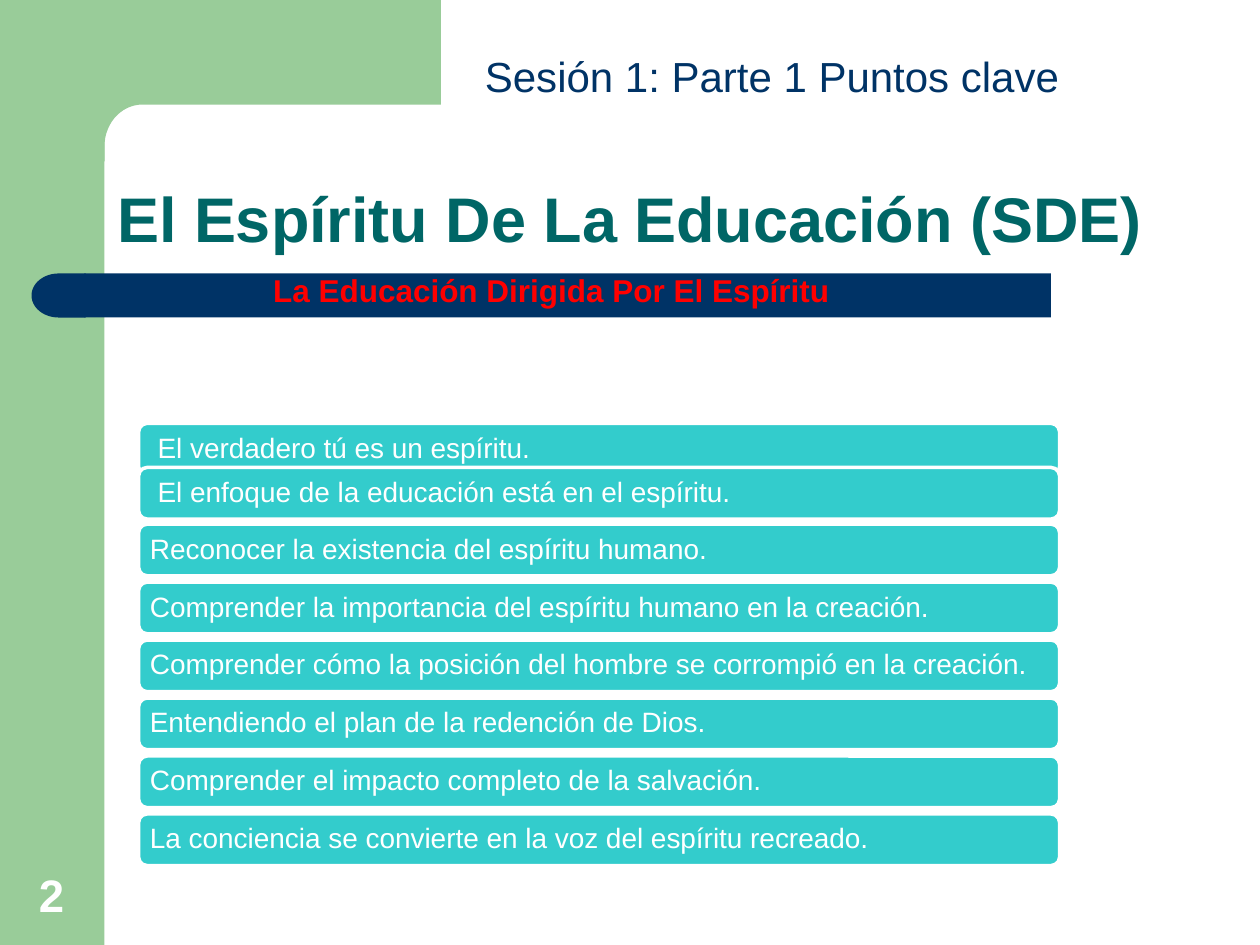
import math
import pptx
import pptx.util
import pptx.dml.color
import pptx.enum.shapes
import pptx.enum.text

Inches = pptx.util.Inches
Shape = pptx.enum.shapes.MSO_SHAPE
Anchor = pptx.enum.text.MSO_ANCHOR
Align = pptx.enum.text.PP_ALIGN

GREEN, NAVY, TEAL = "99CC99", "003366", "006666"
AQUA, RED, WHITE = "33CCCC", "FF0000", "FFFFFF"

POINTS = [
    " El verdadero tú es un espíritu.",
    " El enfoque de la educación está en el espíritu.",
    "Reconocer la existencia del espíritu humano.",
    "Comprender la importancia del espíritu humano en la creación.",
    "Comprender cómo la posición del hombre se corrompió en la creación.",
    "Entendiendo el plan de la redención de Dios.",
    "Comprender el impacto completo de la salvación.",
    "La conciencia se convierte en la voz del espíritu recreado.",
]


def color(code):
    return pptx.dml.color.RGBColor.from_string(code)


def write(frame, text, size=16, ink=WHITE, bold=False, align=Align.LEFT,
          anchor=Anchor.TOP, space=1.0, wrap=True, inset=None):
    frame.word_wrap = wrap
    frame.auto_size = pptx.enum.text.MSO_AUTO_SIZE.NONE
    frame.vertical_anchor = anchor
    if inset is not None:
        frame.margin_left = frame.margin_right = Inches(inset)
        frame.margin_top = frame.margin_bottom = Inches(inset)
    para = frame.paragraphs[0]
    para.alignment = align
    para.line_spacing = space
    run = para.add_run()
    run.text = text
    run.font.name = "Arial"
    run.font.size = pptx.util.Pt(size)
    run.font.bold = bold
    run.font.color.rgb = color(ink)


class Deck:
    """Holds the style and the current slide."""

    def __init__(self):
        self.file = pptx.Presentation()
        self.file.slide_width = Inches(10)
        self.file.slide_height = Inches(7.5)
        self.slide = self.file.slides.add_slide(self.file.slide_layouts[5])

    def paint(self, shape, fill, line=None):
        shape.shadow.inherit = False
        shape.fill.solid()
        shape.fill.fore_color.rgb = color(fill)
        if line:
            shape.line.color.rgb = color(line)
            shape.line.width = pptx.util.Pt(2)
        else:
            shape.line.fill.background()
        return shape

    def block(self, kind, box, fill, line=None):
        shape = self.slide.shapes.add_shape(kind, *map(Inches, box))
        return self.paint(shape, fill, line)

    def outline(self, dots, fill):
        dots = [(Inches(x), Inches(y)) for x, y in dots]
        pen = self.slide.shapes.build_freeform(*dots[0])
        pen.add_line_segments(dots[1:], close=True)
        return self.paint(pen.convert_to_shape(), fill)

    def title(self, box, text, **style):
        shape = self.slide.shapes.title
        shape.left, shape.top, shape.width, shape.height = map(Inches, box)
        write(shape.text_frame, text, **style)

    def label(self, box, text, **style):
        shape = self.slide.shapes.add_textbox(*map(Inches, box))
        write(shape.text_frame, text, **style)

    def point(self, top, text):
        bar = self.block(Shape.ROUNDED_RECTANGLE, (1.1, top, 7.31, 0.41),
                         AQUA, WHITE)
        write(bar.text_frame, text, anchor=Anchor.MIDDLE, space=0.9,
              inset=0.07)


def main():
    deck = Deck()
    deck.block(Shape.RECTANGLE, (0, 0, 0.83, 7.5), GREEN)
    turns = [math.radians(6 * step) for step in range(16)]
    curve = [(1.13 - 0.3 * math.sin(t), 1.16 - 0.33 * math.cos(t))
             for t in turns]
    deck.outline([(0.5, 0), (3.5, 0), (3.5, 0.83), *curve,
                  (0.83, 1.28), (0.5, 1.28)], GREEN)
    deck.block(Shape.RECTANGLE, (0.67, 2.17, 7.67, 0.35), NAVY)
    cap = deck.block(Shape.FLOWCHART_DELAY, (0.25, 2.17, 0.43, 0.35), NAVY)
    cap.rotation = 180

    deck.title((0.83, 0.83, 8.67, 1.25), "El Espíritu De La Educación (SDE)",
               size=36, ink=TEAL, bold=True, anchor=Anchor.BOTTOM, space=0.9)
    deck.label((2.07, 2.1, 4.9, 0.4), "La Educación Dirigida Por El Espíritu",
               size=18, ink=RED, bold=True, wrap=False)
    deck.label((0.09, 6.83, 0.64, 0.53), "2", size=26, bold=True,
               align=Align.CENTER, anchor=Anchor.BOTTOM)
    deck.label((3.75, 0.35, 4.81, 0.5), "Sesión 1: Parte 1 Puntos clave",
               size=24, ink=NAVY, wrap=False)

    tops = [3.36, 3.71] + [4.16 + 0.46 * row for row in range(6)]
    for top, text in zip(tops, POINTS):
        deck.point(top, text)
    deck.file.save("out.pptx")


if __name__ == "__main__":
    main()
